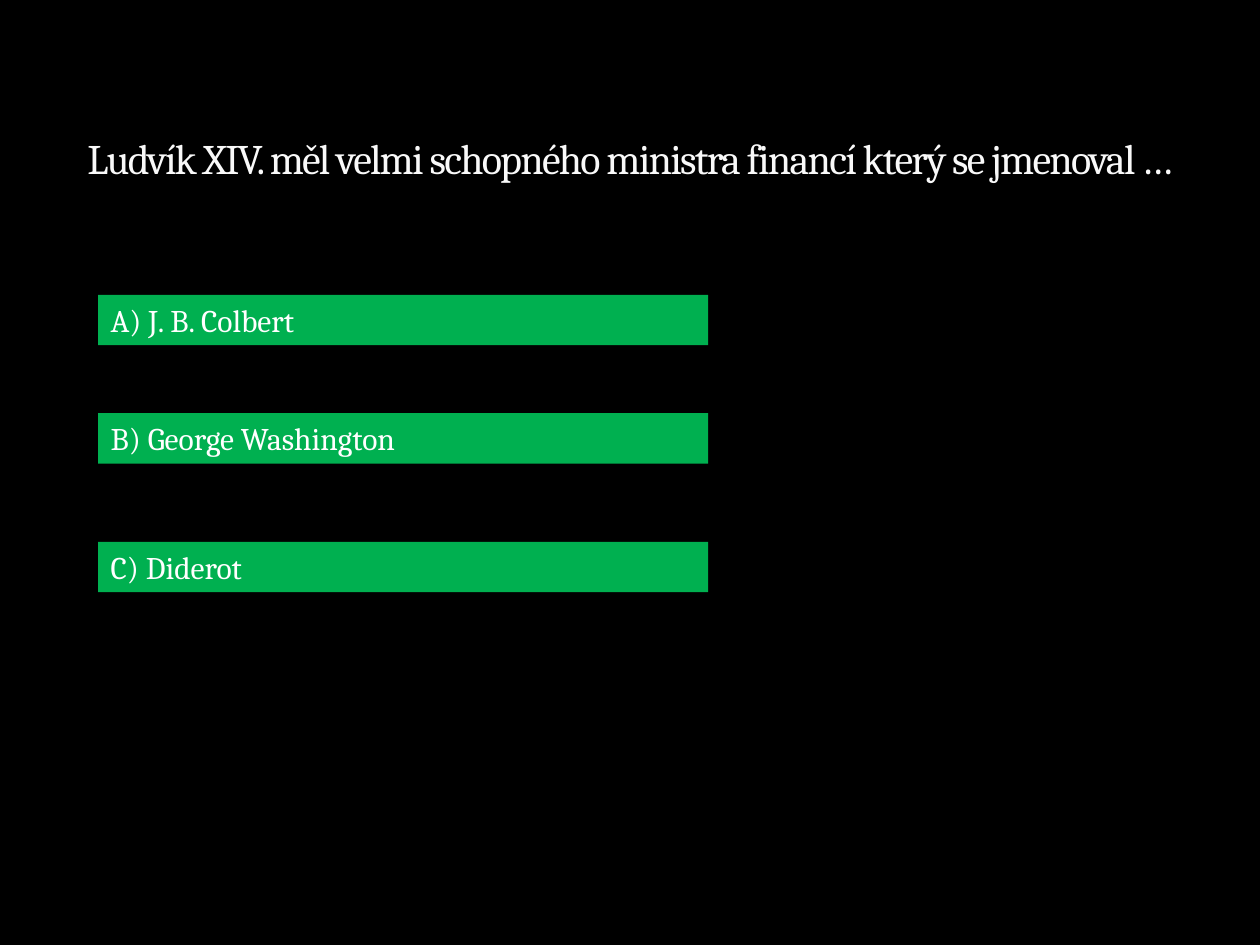
from lxml.etree import SubElement
from pptx import Presentation
from pptx.dml.color import RGBColor
from pptx.enum.shapes import MSO_SHAPE as Shape
from pptx.enum.text import MSO_ANCHOR as Anchor, MSO_AUTO_SIZE as AutoSize, PP_ALIGN as Align
from pptx.oxml.ns import qn
from pptx.util import Inches, Pt

COLORS = {
    "background": "000000",
    "title": "F9F9F9",
    "outline": "3C4422",
    "answer": "00B050",
    "answer_text": "FFFFFF",
}
FONT = "Cambria"
TITLE = "Ludvík XIV. měl velmi schopného ministra financí který se jmenoval …"
ANSWERS = [
    (2.34, "A) J. B. Colbert"),
    (3.28, "B) George Washington"),
    (4.3, "C) Diderot"),
]


class QuizSlide:
    def __init__(self, presentation):
        self.slide = presentation.slides.add_slide(presentation.slide_layouts[6])
        fill = self.slide.background.fill
        fill.solid()
        fill.fore_color.rgb = self.color("background")

    def color(self, name):
        return RGBColor.from_string(COLORS[name])

    def add_text(self, shape, text, size, color, alignment, frame_format):
        frame = shape.text_frame
        for name, value in frame_format.items():
            setattr(frame, name, value)
        paragraph = frame.paragraphs[0]
        paragraph.alignment = alignment
        run = paragraph.add_run()
        run.text = text
        for name, value in {"name": FONT, "size": Pt(size)}.items():
            setattr(run.font, name, value)
        run.font.color.rgb = self.color(color)
        return run

    def title(self, text, left, top, width, height):
        box = self.slide.shapes.add_textbox(*map(Inches, (left, top, width, height)))
        frame_format = {"word_wrap": True, "vertical_anchor": Anchor.BOTTOM}
        run = self.add_text(box, text, 24, "title", Align.CENTER, frame_format)
        properties = run._r.get_or_add_rPr()
        properties.set("spc", "-100")
        outline = SubElement(properties, qn("a:ln"), w=str(Pt(0.25)))
        fill = SubElement(outline, qn("a:solidFill"))
        color = SubElement(fill, qn("a:srgbClr"), val=COLORS["outline"])
        SubElement(color, qn("a:alpha"), val="25000")
        properties.insert(0, outline)

    def answer(self, text, left, top, width, height):
        bounds = map(Inches, (left, top, width, height))
        bar = self.slide.shapes.add_shape(Shape.RECTANGLE, *bounds)
        bar.shadow.inherit = False
        bar.fill.solid()
        bar.fill.fore_color.rgb = self.color("answer")
        bar.line.fill.background()
        frame_format = {
            "word_wrap": True,
            "vertical_anchor": Anchor.TOP,
            "auto_size": AutoSize.SHAPE_TO_FIT_TEXT,
        }
        self.add_text(bar, text, 18, "answer_text", Align.LEFT, frame_format)


def main():
    presentation = Presentation()
    presentation.slide_width = Inches(10)
    presentation.slide_height = Inches(7.5)
    quiz = QuizSlide(presentation)
    quiz.title(TITLE, 0.5, 0.17, 9, 1.33)
    for top, text in ANSWERS:
        quiz.answer(text, 0.78, top, 4.84, 0.4)
    presentation.save("out.pptx")


if __name__ == "__main__":
    main()
